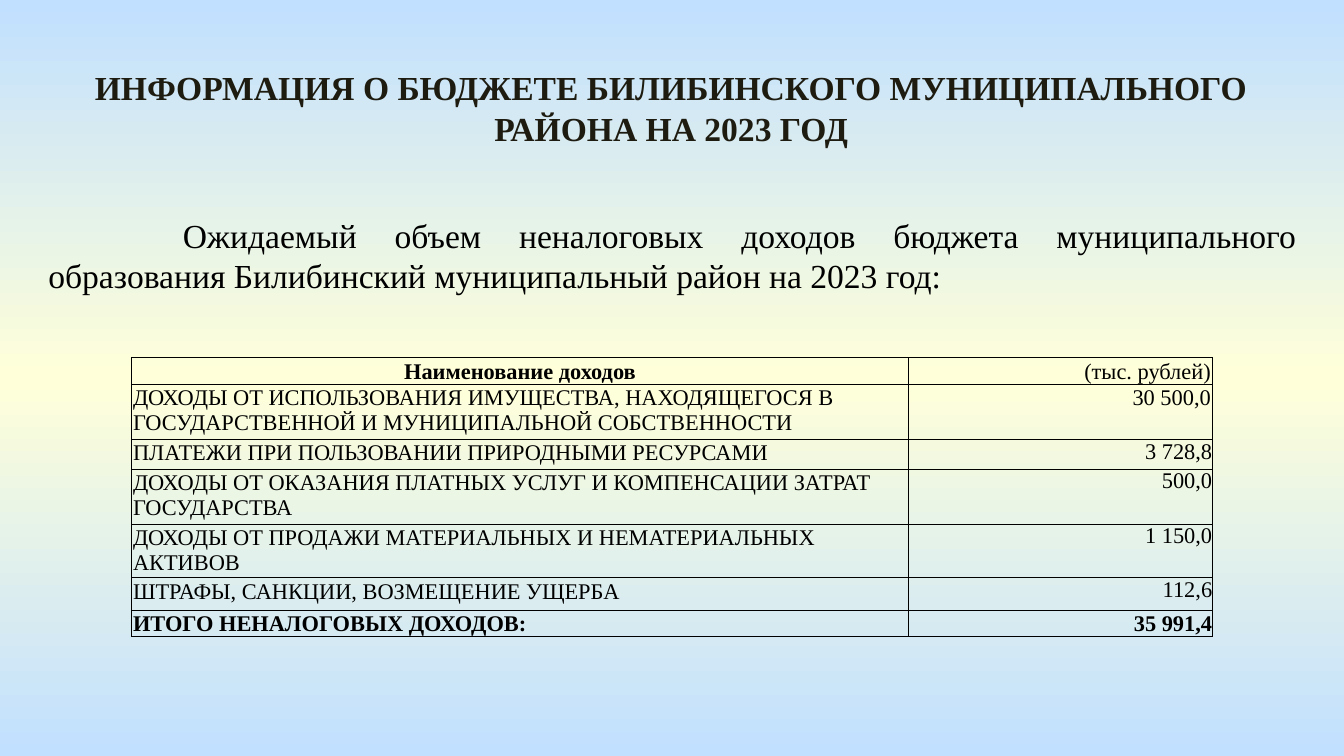
import copy

import pptx
import pptx.dml.color
import pptx.enum.text
import pptx.oxml.ns
import pptx.util
from lxml import etree

Inches = pptx.util.Inches
Pt = pptx.util.Pt
ALIGN = pptx.enum.text.PP_ALIGN
ANCHOR = pptx.enum.text.MSO_ANCHOR
qn = pptx.oxml.ns.qn

COLORS = {
    "sky": "C1E0FF",
    "cream": "FFFFD9",
    "title": "1E1C11",
    "text": "000000",
    "border": "000000",
}
FONT = "Times New Roman"
SLIDE_WIDTH = 10

TITLE = "ИНФОРМАЦИЯ О БЮДЖЕТЕ БИЛИБИНСКОГО МУНИЦИПАЛЬНОГО РАЙОНА НА 2023 ГОД"
INTRO = ("Ожидаемый объем неналоговых доходов бюджета муниципального "
         "образования Билибинский муниципальный район на 2023 год:")

# Income name, amount, row height
INCOME_ROWS = [
    ("Наименование доходов", "(тыс. рублей)", 0.2),
    ("ДОХОДЫ ОТ ИСПОЛЬЗОВАНИЯ ИМУЩЕСТВА, НАХОДЯЩЕГОСЯ В ГОСУДАРСТВЕННОЙ "
     "И МУНИЦИПАЛЬНОЙ СОБСТВЕННОСТИ", "30 500,0", 0.41),
    ("ПЛАТЕЖИ ПРИ ПОЛЬЗОВАНИИ ПРИРОДНЫМИ РЕСУРСАМИ", "3 728,8", 0.22),
    ("ДОХОДЫ ОТ ОКАЗАНИЯ ПЛАТНЫХ УСЛУГ И КОМПЕНСАЦИИ ЗАТРАТ ГОСУДАРСТВА",
     "500,0", 0.41),
    ("ДОХОДЫ ОТ ПРОДАЖИ МАТЕРИАЛЬНЫХ И НЕМАТЕРИАЛЬНЫХ АКТИВОВ",
     "1 150,0", 0.4),
    ("ШТРАФЫ, САНКЦИИ, ВОЗМЕЩЕНИЕ УЩЕРБА", "112,6", 0.24),
    ("ИТОГО НЕНАЛОГОВЫХ ДОХОДОВ:", "35 991,4", 0.2),
]
COLUMN_WIDTHS = [5.78, 2.26]


def rgb(name):
    return pptx.dml.color.RGBColor.from_string(COLORS[name])


def set_text(text_frame, text, size=12, bold=False, color="text",
             align=ALIGN.LEFT):
    """Write one formatted paragraph and return it."""
    paragraph = text_frame.paragraphs[0]
    paragraph.alignment = align
    paragraph.space_before = Pt(0)
    run = paragraph.add_run()
    run.text = text
    run.font.name = FONT
    run.font.size = Pt(size)
    run.font.bold = bold
    run.font.color.rgb = rgb(color)
    return paragraph


def set_background(slide):
    """Vertical gradient: sky, cream, sky."""
    fill = slide.background.fill
    fill.gradient()
    fill.gradient_angle = 270
    stop_list = slide.element.find(".//" + qn("a:gsLst"))
    stop_list.append(copy.deepcopy(stop_list[0]))
    for stop, color, position in zip(fill.gradient_stops,
                                     ["sky", "cream", "sky"], [0, 0.5, 1]):
        stop.color.rgb = rgb(color)
        stop.position = position


def place_placeholder(shape, left, top, width, height):
    shape.left, shape.top = Inches(left), Inches(top)
    shape.width, shape.height = Inches(width), Inches(height)
    text_frame = shape.text_frame
    text_frame.word_wrap = True
    text_frame.auto_size = pptx.enum.text.MSO_AUTO_SIZE.NONE
    text_frame.vertical_anchor = ANCHOR.TOP
    return text_frame


def set_first_line_indent(paragraph, indent):
    """Indent the first line and switch the bullet off."""
    properties = paragraph._p.get_or_add_pPr()
    properties.set("marL", "0")
    properties.set("indent", str(Inches(indent)))
    etree.SubElement(properties, qn("a:buNone"))


def set_borders(cell, width=0.5):
    properties = cell._tc.get_or_add_tcPr()
    for side in ("a:lnL", "a:lnR", "a:lnT", "a:lnB"):
        line = etree.SubElement(properties, qn(side), w=str(Pt(width)))
        fill = etree.SubElement(line, qn("a:solidFill"))
        etree.SubElement(fill, qn("a:srgbClr"), val=COLORS["border"])


def format_cell(cell, inset, anchor):
    set_borders(cell)
    cell.fill.background()
    cell.margin_left = cell.margin_right = cell.margin_top = Inches(inset)
    cell.margin_bottom = 0
    cell.vertical_anchor = anchor


def add_income_table(slide, left, top):
    heights = [height for _, _, height in INCOME_ROWS]
    table = slide.shapes.add_table(
        len(INCOME_ROWS), len(COLUMN_WIDTHS), Inches(left), Inches(top),
        Inches(sum(COLUMN_WIDTHS)), Inches(sum(heights))).table
    table.first_row = table.horz_banding = False
    for column, width in zip(table.columns, COLUMN_WIDTHS):
        column.width = Inches(width)

    last = len(INCOME_ROWS) - 1
    for index, (name, amount, height) in enumerate(INCOME_ROWS):
        table.rows[index].height = Inches(height)
        is_header, is_total = index == 0, index == last
        anchor = ANCHOR.BOTTOM if is_header or is_total else ANCHOR.TOP
        name_cell, amount_cell = table.cell(index, 0), table.cell(index, 1)
        format_cell(name_cell, 0.01, anchor)
        format_cell(amount_cell, 0.01 if index < 2 else 0, anchor)
        set_text(name_cell.text_frame, name, bold=is_header or is_total,
                 align=ALIGN.CENTER if is_header else ALIGN.LEFT)
        set_text(amount_cell.text_frame, amount, bold=is_total,
                 align=ALIGN.RIGHT)


def main():
    presentation = pptx.Presentation()
    presentation.slide_width = Inches(SLIDE_WIDTH)
    presentation.slide_height = Inches(SLIDE_WIDTH * 9 / 16)
    slide = presentation.slides.add_slide(presentation.slide_layouts[1])
    set_background(slide)

    # Title
    title = place_placeholder(slide.shapes.title, 0.39, 0.45, 9.21, 0.71)
    set_text(title, TITLE, size=18, bold=True, color="title",
             align=ALIGN.CENTER)

    # Introductory paragraph
    intro = place_placeholder(slide.placeholders[1], 0.26, 1.55, 9.49, 0.71)
    paragraph = set_text(intro, INTRO, size=18, align=ALIGN.JUSTIFY)
    set_first_line_indent(paragraph, 1)

    # Table of non-tax income
    add_income_table(slide, 0.98, 2.66)

    presentation.save("out.pptx")


if __name__ == "__main__":
    main()
